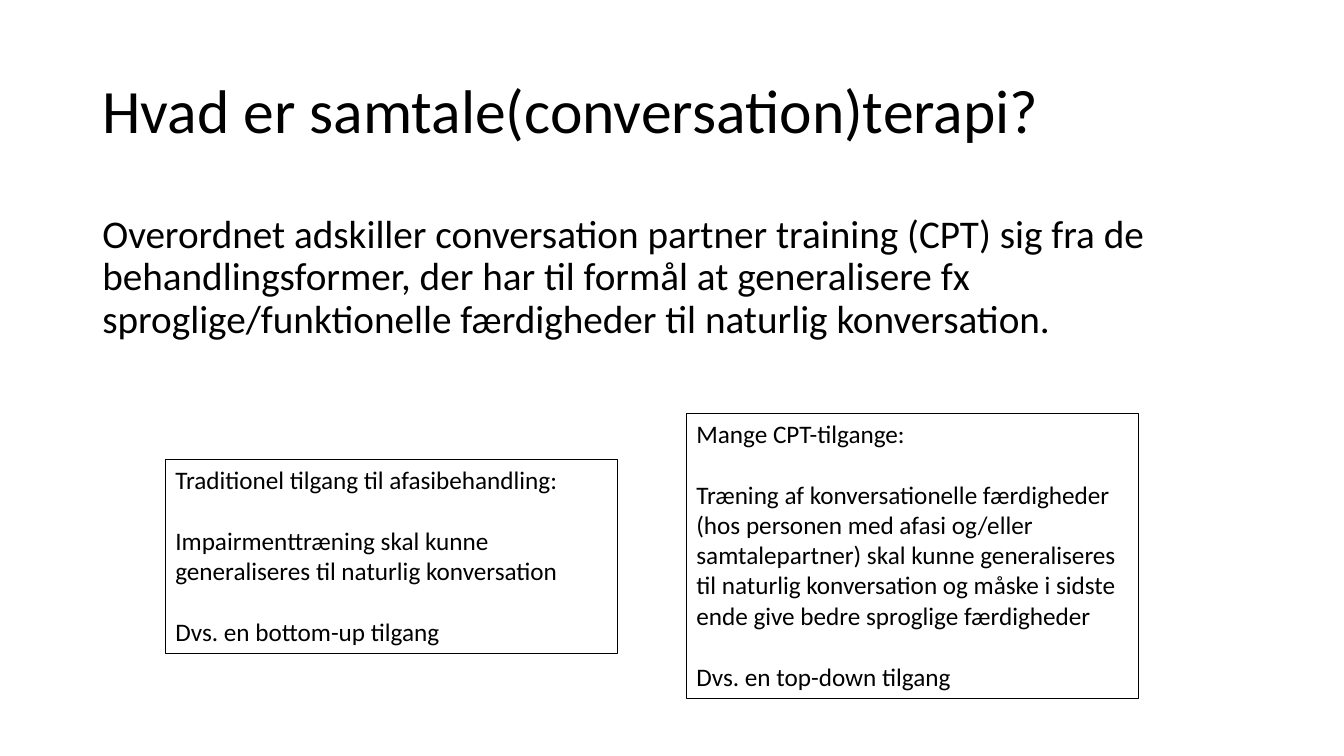
from pptx import Presentation
from pptx import util as u
from pptx.dml.color import RGBColor
from pptx.enum import shapes, text

BLACK = RGBColor(0, 0, 0)
FONT = "Calibri"
LEFT, WIDE = 2.33, 29.21
BOX_WIDE = 11.4

TITLE = "Hvad er samtale(conversation)terapi?"
INTRO = (
    "Overordnet adskiller conversation partner training (CPT) sig fra de "
    "behandlingsformer, der har til formål at generalisere fx "
    "sproglige/funktionelle færdigheder til naturlig konversation."
)
OLD_WAY = [
    "Traditionel tilgang til afasibehandling:",
    "Impairmenttræning skal kunne generaliseres til naturlig konversation",
    "Dvs. en bottom-up tilgang",
]
CPT_WAY = [
    "Mange CPT-tilgange:",
    "Træning af konversationelle færdigheder (hos personen med afasi og/eller "
    "samtalepartner) skal kunne generaliseres til naturlig konversation og "
    "måske i sidste ende give bedre sproglige færdigheder",
    "Dvs. en top-down tilgang",
]


def write(frame, lines, size, anchor, spacing=1.0, gap=0):
    frame.word_wrap = True
    frame.auto_size = text.MSO_AUTO_SIZE.NONE
    frame.vertical_anchor = anchor
    for i, line in enumerate(lines):
        para = frame.add_paragraph() if i else frame.paragraphs[0]
        para.alignment = text.PP_ALIGN.LEFT
        para.line_spacing = spacing
        para.space_before = u.Pt(gap if i else 0)
        run = para.add_run()
        run.text = line
        run.font.name = FONT
        run.font.size = u.Pt(size)
        run.font.color.rgb = BLACK


def add_title(slide):
    title = slide.shapes.title
    title.left, title.top = u.Cm(LEFT), u.Cm(1.01)
    title.width, title.height = u.Cm(WIDE), u.Cm(3.68)
    write(title.text_frame, [TITLE], 44, text.MSO_ANCHOR.MIDDLE, 0.9)


def add_intro(slide):
    intro = slide.shapes.add_textbox(
        u.Cm(LEFT), u.Cm(5.28), u.Cm(WIDE), u.Cm(6.07))
    write(intro.text_frame, [INTRO], 28, text.MSO_ANCHOR.TOP, 0.9)


def add_box(slide, left, top, height, lines):
    box = slide.shapes.add_shape(
        shapes.MSO_SHAPE.RECTANGLE,
        u.Cm(left), u.Cm(top), u.Cm(BOX_WIDE), u.Cm(height))
    box.shadow.inherit = False
    box.fill.background()
    box.line.color.rgb = BLACK
    box.line.width = u.Pt(0.75)
    write(box.text_frame, lines, 18, text.MSO_ANCHOR.TOP, gap=22)


def main():
    deck = Presentation()
    deck.slide_width, deck.slide_height = u.Cm(33.87), u.Cm(19.05)
    slide = deck.slides.add_slide(deck.slide_layouts[5])
    add_title(slide)
    add_intro(slide)
    add_box(slide, 4.17, 11.58, 4.88, OLD_WAY)
    add_box(slide, 17.3, 10.41, 7.19, CPT_WAY)
    deck.save("out.pptx")


if __name__ == "__main__":
    main()
